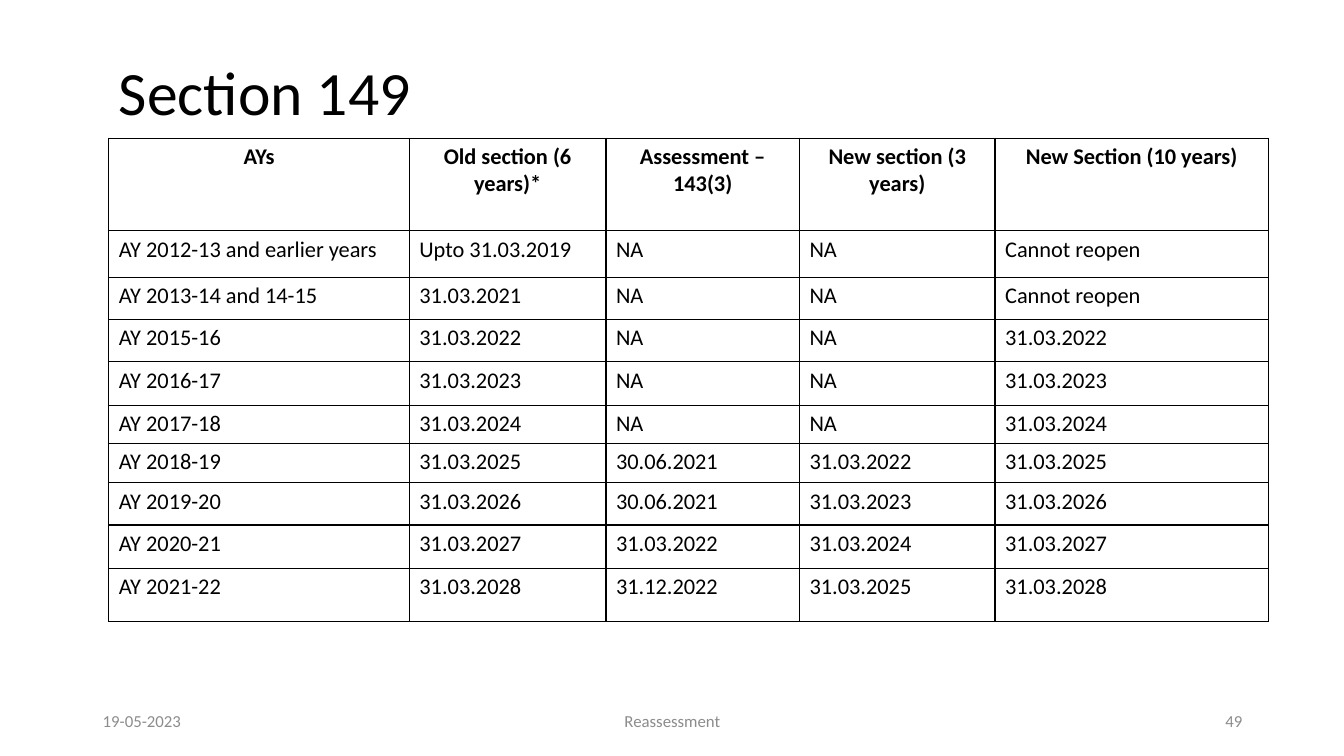
"""Build the Section 149 slide of reassessment time limits."""
from dataclasses import dataclass

from lxml.etree import SubElement
from pptx import Presentation
from pptx.dml.color import RGBColor
from pptx.enum.text import MSO_ANCHOR as Anchor, PP_ALIGN as Align
from pptx.oxml.ns import qn
from pptx.slide import Slide
from pptx.table import _Cell as Cell
from pptx.text.text import TextFrame
from pptx.util import Inches, Pt

FONT = "Calibri"
BLACK = "000000"
GREY = "8C8C8C"
BORDER_EMU = Pt(1)

COLUMN_WIDTHS = [2.98, 1.95, 1.92, 1.94, 2.71]
ROW_HEIGHTS = [0.92, 0.46, 0.42, 0.42, 0.43, 0.38, 0.39, 0.42, 0.43, 0.53]
TIME_LIMITS = [
    ("AYs", "Old section (6 years)*", "Assessment – 143(3)",
     "New section (3 years)", "New Section (10 years)"),
    ("AY 2012-13 and earlier years", "Upto 31.03.2019", "NA", "NA", "Cannot reopen"),
    ("AY 2013-14 and 14-15", "31.03.2021", "NA", "NA", "Cannot reopen"),
    ("AY 2015-16", "31.03.2022", "NA", "NA", "31.03.2022"),
    ("AY 2016-17", "31.03.2023", "NA", "NA", "31.03.2023"),
    ("AY 2017-18", "31.03.2024", "NA", "NA", "31.03.2024"),
    ("AY 2018-19", "31.03.2025", "30.06.2021", "31.03.2022", "31.03.2025"),
    ("AY 2019-20", "31.03.2026", "30.06.2021", "31.03.2023", "31.03.2026"),
    ("AY 2020-21", "31.03.2027", "31.03.2022", "31.03.2024", "31.03.2027"),
    ("AY 2021-22", "31.03.2028", "31.12.2022", "31.03.2025", "31.03.2028"),
]


@dataclass(frozen=True)
class FooterItem:
    text: str
    left: float
    width: float
    align: Align


FOOTER = [
    FooterItem("19-05-2023", 0.92, 3, Align.LEFT),
    FooterItem("Reassessment", 4.42, 4.5, Align.CENTER),
    FooterItem("49", 9.42, 3, Align.RIGHT),
]


def color(value: str) -> RGBColor:
    return RGBColor.from_string(value)


def write(frame: TextFrame, text: str, *, size: float, fill: str = BLACK,
          bold: bool = False, align: Align = Align.LEFT,
          anchor: Anchor = Anchor.TOP, spacing: float = 1.0) -> None:
    frame.word_wrap = True
    frame.vertical_anchor = anchor
    paragraph = frame.paragraphs[0]
    paragraph.alignment = align
    paragraph.line_spacing = spacing
    run = paragraph.add_run()
    run.text = text
    run.font.name = FONT
    run.font.size = Pt(size)
    run.font.bold = bold
    run.font.color.rgb = color(fill)


def draw_borders(cell: Cell) -> None:
    properties = cell._tc.get_or_add_tcPr()
    for position, side in enumerate(("lnL", "lnR", "lnT", "lnB")):
        line = SubElement(properties, qn(f"a:{side}"), w=str(BORDER_EMU))
        solid = SubElement(line, qn("a:solidFill"))
        SubElement(solid, qn("a:srgbClr"), val=BLACK)
        properties.insert(position, line)


def add_title(slide: Slide) -> None:
    title = slide.shapes.title
    title.left, title.top = Inches(1.08), Inches(0.57)
    title.width, title.height = Inches(11.5), Inches(1.45)
    write(title.text_frame, "Section 149", size=44, spacing=0.9)


def add_time_limits(slide: Slide) -> None:
    table = slide.shapes.add_table(
        len(TIME_LIMITS), len(COLUMN_WIDTHS), Inches(1.08), Inches(1.37),
        Inches(sum(COLUMN_WIDTHS)), Inches(sum(ROW_HEIGHTS))).table
    table.first_row = False
    table.horz_banding = False
    for column, width in zip(table.columns, COLUMN_WIDTHS):
        column.width = Inches(width)
    for index, (row, height) in enumerate(zip(table.rows, ROW_HEIGHTS)):
        row.height = Inches(height)
        heading = index == 0
        for cell, text in zip(row.cells, TIME_LIMITS[index]):
            cell.fill.background()
            draw_borders(cell)
            write(cell.text_frame, text, size=16, bold=heading,
                  align=Align.CENTER if heading else Align.LEFT)


def add_footer(slide: Slide, item: FooterItem) -> None:
    box = slide.shapes.add_textbox(
        Inches(item.left), Inches(6.95), Inches(item.width), Inches(0.4))
    write(box.text_frame, item.text, size=12, fill=GREY,
          align=item.align, anchor=Anchor.MIDDLE)


def main() -> None:
    deck = Presentation()
    deck.slide_width, deck.slide_height = Inches(13.33), Inches(7.5)
    slide = deck.slides.add_slide(deck.slide_layouts[5])
    add_title(slide)
    add_time_limits(slide)
    for item in FOOTER:
        add_footer(slide, item)
    deck.save("out.pptx")


if __name__ == "__main__":
    main()
